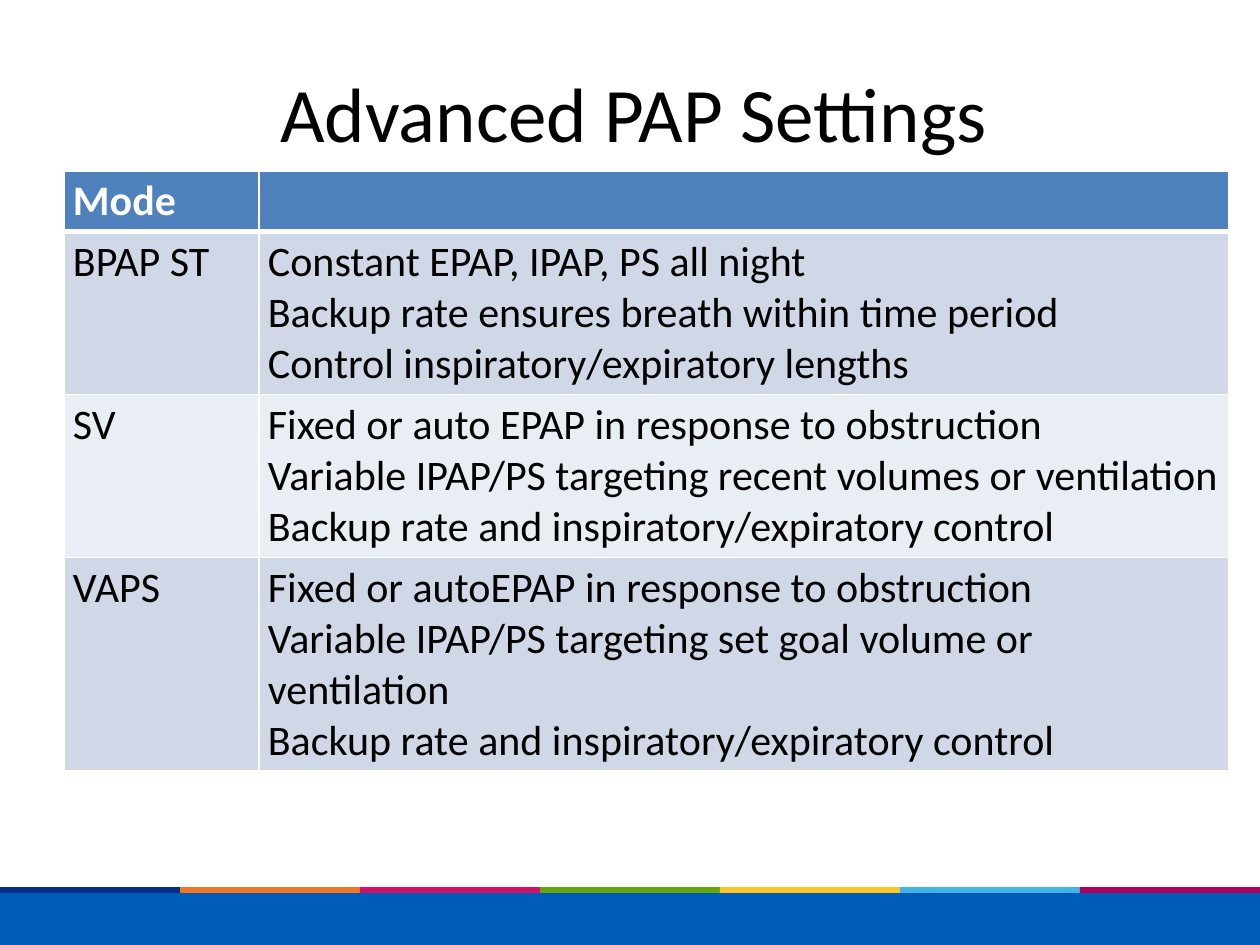
import pptx
import pptx.dml.color
import pptx.enum.shapes
import pptx.enum.text
import pptx.oxml
import pptx.oxml.ns
import pptx.util

EMU_PER_PX = 914400 / 126
COLORS = {
    "black": "000000", "white": "FFFFFF", "header": "4F81BD",
    "odd_row": "D0D8E8", "even_row": "E9EDF4", "footer": "005CB9",
    "navy": "002F87", "orange": "EF7622", "pink": "D51067",
    "green": "63A70A", "yellow": "FFC627", "sky": "40B4E5",
    "magenta": "B00060",
}


def px(length):
    return pptx.util.Emu(round(length * EMU_PER_PX))


def write(frame, text, size=24, color="black", bold=False, align=None):
    """Fill a text frame, one paragraph for each line of the text."""
    frame.text = text
    for paragraph in frame.paragraphs:
        paragraph.alignment = align
        font = paragraph.font
        font.name, font.size, font.bold = "Calibri", pptx.util.Pt(size), bold
        font.color.rgb = pptx.dml.color.RGBColor.from_string(COLORS[color])


deck = pptx.Presentation()
deck.slide_width, deck.slide_height = px(1260), px(945)
slide = deck.slides.add_slide(deck.slide_layouts[6])

# Footer band with a row of equal stripes on its upper edge
stripe_colors = ["navy", "orange", "pink", "green", "yellow", "sky", "magenta"]
bars = [(0, 892, 1260, 53, "footer")]
bars += [(180 * i, 887, 180, 6, color) for i, color in enumerate(stripe_colors)]
for left, top, width, height, color in bars:
    bar = slide.shapes.add_shape(
        pptx.enum.shapes.MSO_SHAPE.RECTANGLE,
        px(left), px(top), px(width), px(height))
    bar.shadow.inherit = False
    bar.fill.solid()
    bar.fill.fore_color.rgb = pptx.dml.color.RGBColor.from_string(COLORS[color])
    bar.line.fill.background()

title = slide.shapes.add_textbox(px(67), px(53), px(1134), px(118)).text_frame
title.word_wrap = True
title.vertical_anchor = pptx.enum.text.MSO_ANCHOR.MIDDLE
write(title, "Advanced PAP Settings", size=44,
      align=pptx.enum.text.PP_ALIGN.CENTER)

# Modes and their settings
modes = [
    ("Mode", ""),
    ("BPAP ST", "Constant EPAP, IPAP, PS all night\n"
                "Backup rate ensures breath within time period\n"
                "Control inspiratory/expiratory lengths"),
    ("SV", "Fixed or auto EPAP in response to obstruction\n"
           "Variable IPAP/PS targeting recent volumes or ventilation\n"
           "Backup rate and inspiratory/expiratory control"),
    ("VAPS", "Fixed or autoEPAP in response to obstruction\n"
             "Variable IPAP/PS targeting set goal volume or ventilation\n"
             "Backup rate and inspiratory/expiratory control"),
]
column_widths = [195, 970]
row_heights = [60, 163, 163, 214]
settings = slide.shapes.add_table(
    len(modes), 2, px(64), px(171),
    px(sum(column_widths)), px(sum(row_heights))).table
for column, width in zip(settings.columns, column_widths):
    column.width = px(width)
for row, height in zip(settings.rows, row_heights):
    row.height = px(height)

for r, row_texts in enumerate(modes):
    is_header = r == 0
    row_fill = "header" if is_header else "odd_row" if r % 2 else "even_row"
    border_widths = {"lnL": 1, "lnR": 1,
                     "lnT": 3 if r == 1 else 1, "lnB": 3 if is_header else 1}
    for c, text in enumerate(row_texts):
        cell = settings.cell(r, c)
        cell.margin_left = cell.margin_right = px(9)
        cell.margin_top = cell.margin_bottom = px(5)
        write(cell.text_frame, text, bold=is_header,
              color="white" if is_header else "black")
        for side, points in border_widths.items():
            cell._tc.get_or_add_tcPr().append(pptx.oxml.parse_xml(
                f'<a:{side} {pptx.oxml.ns.nsdecls("a")} w="{points * 12700}">'
                f'<a:solidFill><a:srgbClr val="{COLORS["white"]}"/></a:solidFill>'
                f'</a:{side}>'))
        cell.fill.solid()
        cell.fill.fore_color.rgb = pptx.dml.color.RGBColor.from_string(
            COLORS[row_fill])

deck.save("out.pptx")
